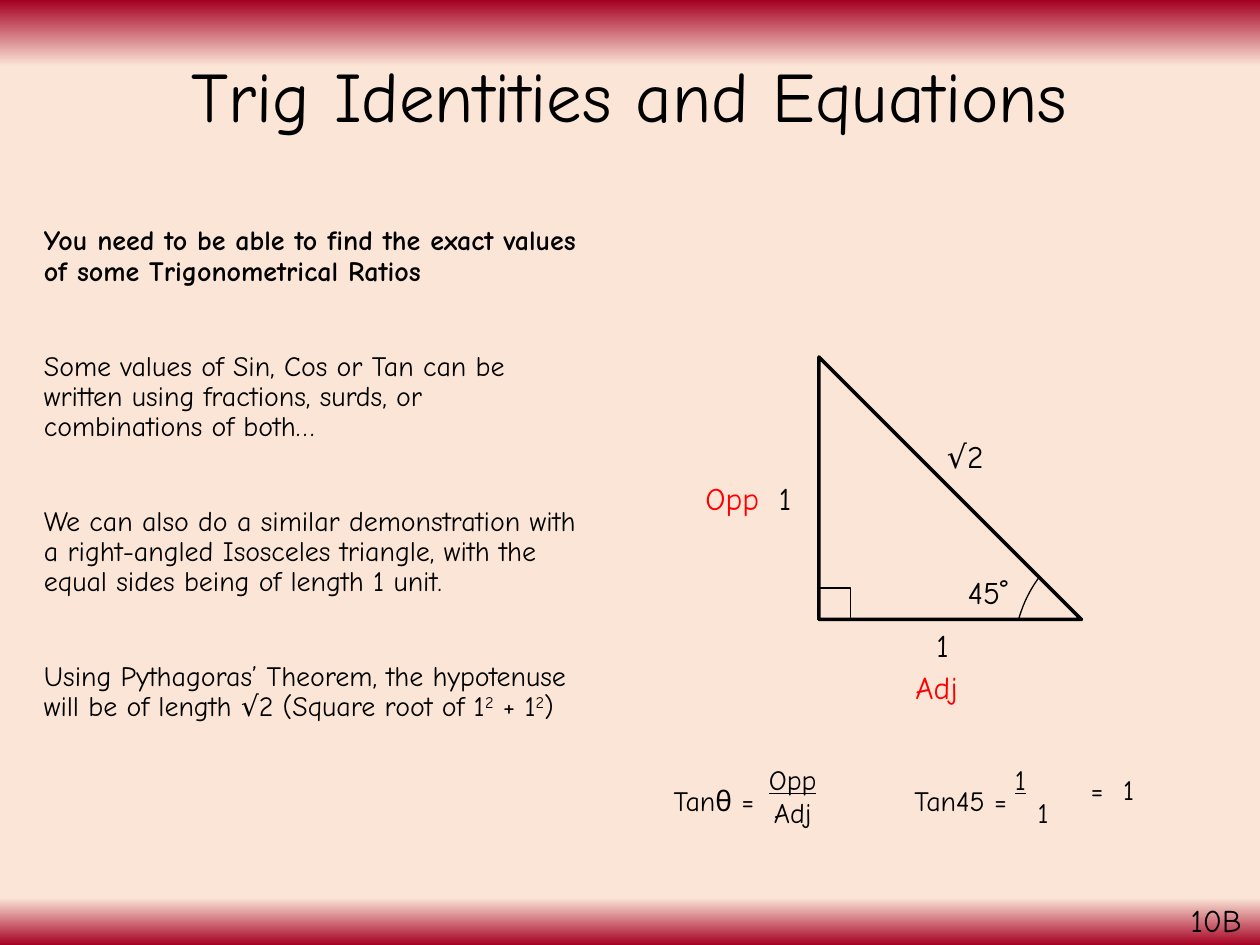
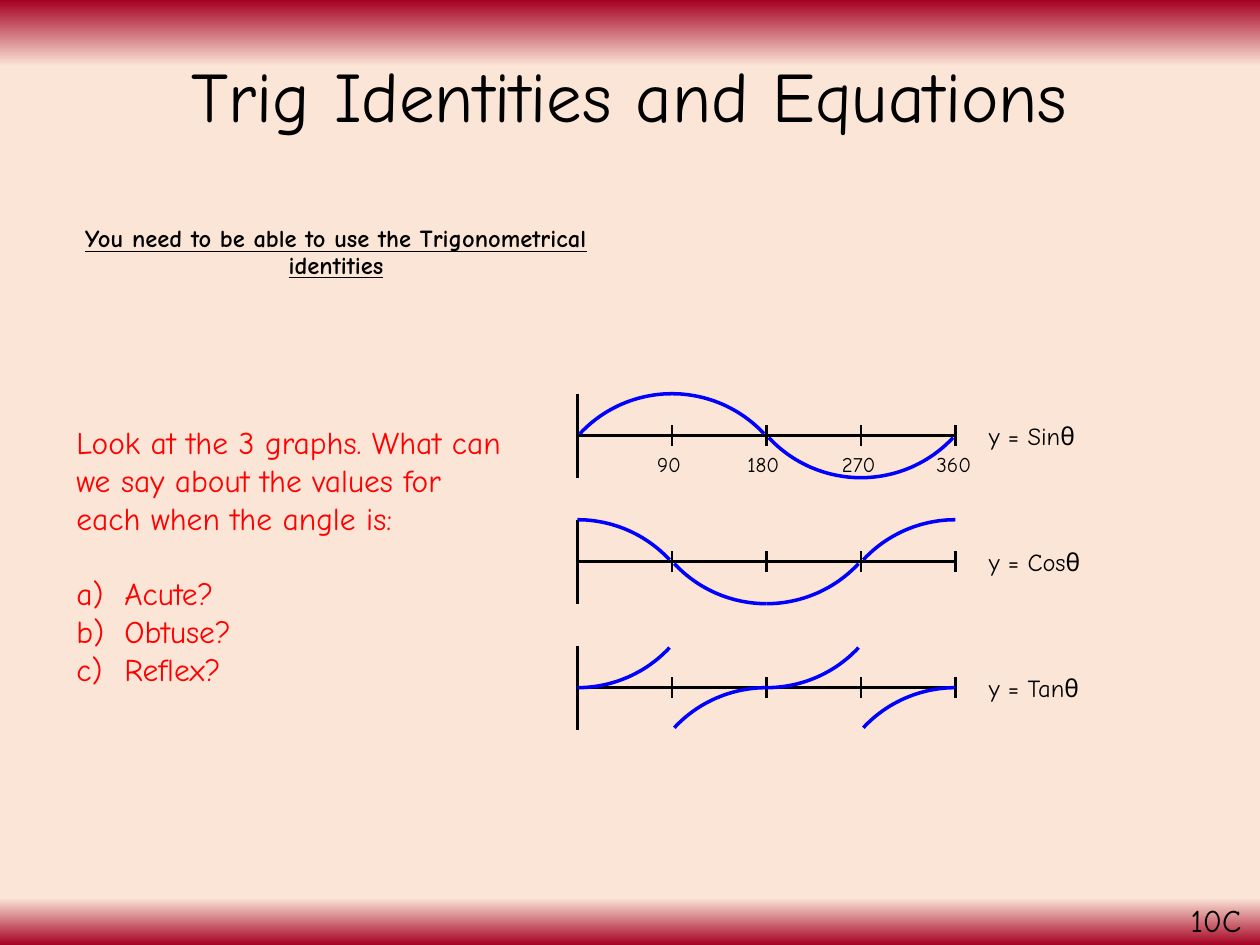
from math import cos, radians, sin

from lxml import etree
from pptx import Presentation
from pptx.dml.color import RGBColor
from pptx.enum.shapes import MSO_CONNECTOR, MSO_SHAPE
from pptx.enum.text import MSO_ANCHOR, PP_ALIGN
from pptx.oxml.ns import qn
from pptx.util import Inches, Pt

LEFT, CENTER = PP_ALIGN.LEFT, PP_ALIGN.CENTER
TOP, MIDDLE = MSO_ANCHOR.TOP, MSO_ANCHOR.MIDDLE
STRAIGHT = MSO_CONNECTOR.STRAIGHT
RECT, RIGHT_TRIANGLE = MSO_SHAPE.RECTANGLE, MSO_SHAPE.RIGHT_TRIANGLE

BLACK = RGBColor(0x00, 0x00, 0x00)
RED = RGBColor(0xFF, 0x00, 0x00)
BLUE = RGBColor(0x00, 0x00, 0xFF)
CRIMSON = RGBColor(0xA5, 0x00, 0x21)
PEACH = RGBColor(0xFB, 0xE5, 0xD6)

FONT = "Comic Neue"
TITLE = "Trig Identities and Equations"
BANDS = [(0, CRIMSON), (7, PEACH), (95, PEACH), (100, CRIMSON)]
COLS, ROWS = 120, 90


class Deck:
    def __init__(self):
        self.prs = Presentation()
        self.prs.slide_width = Inches(10)
        self.prs.slide_height = Inches(7.5)
        self.col = self.prs.slide_width / COLS
        self.row = self.prs.slide_height / ROWS
        self.s = None

    def x(self, cols):
        return round(cols * self.col)

    def y(self, rows):
        return round(rows * self.row)

    def box(self, x, y, w, h):
        return self.x(x), self.y(y), self.x(w), self.y(h)

    def slide(self, section):
        self.s = self.prs.slides.add_slide(self.prs.slide_layouts[6])
        self.background()
        self.text(8.3, 2.9, 103.4, 13.1, [TITLE], 40.5, align=CENTER,
                  anchor=MIDDLE, spacing=0.9)
        self.text(112.2, 85.2, 7.8, 4.8, [section])

    def background(self):
        fill = self.s.background.fill
        fill.gradient()
        fill.gradient_angle = 270
        stops = self.s.element.find(".//" + qn("a:gsLst"))
        for stop in list(stops):
            stops.remove(stop)
        for pos, color in BANDS:
            stop = etree.SubElement(stops, qn("a:gs"), pos=str(pos * 1000))
            etree.SubElement(stop, qn("a:srgbClr"), val=str(color))

    def text(self, x, y, w, h, paras, size=18, color=BLACK, align=LEFT,
             anchor=TOP, spacing=None):
        tf = self.s.shapes.add_textbox(*self.box(x, y, w, h)).text_frame
        tf.word_wrap = True
        tf.vertical_anchor = anchor
        for i, para in enumerate(paras):
            p = tf.paragraphs[0] if i == 0 else tf.add_paragraph()
            p.alignment = align
            p.line_spacing = spacing
            para = para if isinstance(para, dict) else {"runs": [para]}
            self.indent(p, para)
            for run in para["runs"]:
                self.run(p, run, size, color)

    def indent(self, p, para):
        if "before" in para:
            p.space_before = Pt(para["before"])
        pPr = p._p.get_or_add_pPr()
        if "margin" in para:
            pPr.set("marL", str(Inches(para["margin"])))
        if "number" in para:
            pPr.set("indent", str(-Inches(para["margin"])))
            etree.SubElement(pPr, qn("a:buFont"), typeface=FONT)
            etree.SubElement(pPr, qn("a:buAutoNum"), type=para["number"])

    def run(self, p, run, size, color):
        words, style = run if isinstance(run, tuple) else (run, "")
        r = p.add_run()
        r.text = words
        r.font.name = FONT
        r.font.size = Pt(size)
        r.font.color.rgb = color
        r.font.bold = "b" in style
        r.font.underline = "u" in style
        if "^" in style:
            r._r.get_or_add_rPr().set("baseline", "30000")

    def outline(self, sp, color, width):
        sp.shadow.inherit = False
        sp.fill.background()
        sp.line.color.rgb = color
        sp.line.width = Pt(width)

    def shape(self, kind, x, y, w, h, width):
        sp = self.s.shapes.add_shape(kind, *self.box(x, y, w, h))
        self.outline(sp, BLACK, width)

    def line(self, x1, y1, x2, y2, width=1.5):
        sp = self.s.shapes.add_connector(
            STRAIGHT, self.x(x1), self.y(y1), self.x(x2), self.y(y2))
        sp.line.color.rgb = BLACK
        sp.line.width = Pt(width)
        etree.SubElement(sp._element.spPr, qn("a:effectLst"))

    def arc(self, cx, cy, radius, start, end, color, width, steps=24):
        angles = [radians(start + (end - start) * i / steps)
                  for i in range(steps + 1)]
        points = [(self.x(cx + radius * cos(a)), self.y(cy + radius * sin(a)))
                  for a in angles]
        path = self.s.shapes.build_freeform(*points[0])
        path.add_line_segments(points[1:], close=False)
        self.outline(path.convert_to_shape(), color, width)

    def graph(self, name, axis, arcs):
        left, quarter, radius, sweep = 55, 9, 12, 47
        self.line(left, axis - 4, left, axis + 4)
        self.line(left, axis, left + 4 * quarter, axis)
        for i in range(1, 5):
            tick = left + i * quarter
            self.line(tick, axis - 1, tick, axis + 1)
        for turn, side, height, bend in arcs:
            self.arc(left + turn * quarter, axis - height - bend * radius,
                     radius, bend * 90, bend * (90 - side * sweep), BLUE, 2)
        self.text(93, axis - 2, 12, 4, [name], 14)


def exact_values(d):
    d.slide("10B")
    paras = [
        [("You need to be able to find the exact values of some "
          "Trigonometrical Ratios", "b")],
        ["Some values of Sin, Cos or Tan can be written using fractions, "
         "surds, or combinations of both…"],
        ["We can also do a similar demonstration with a right-angled "
         "Isosceles triangle, with the equal sides being of length 1 unit."],
        ["Using Pythagoras’ Theorem, the hypotenuse will be of length √2 "
         "(Square root of 1", ("2", "^"), " + 1", ("2", "^"), ")"],
    ]
    d.text(0, 21, 57.2, 59.4,
           [{"runs": runs, "margin": 0.25, "before": 37 if i else 10}
            for i, runs in enumerate(paras)], 16, spacing=0.9)

    d.shape(RIGHT_TRIANGLE, 78, 34, 25, 25, 2)
    d.shape(RECT, 78, 56, 3, 3, 0.75)
    d.arc(108.6, 62.15, 12, 195.2, 217.2, BLACK, 0.75)
    for words, x, y, w, color in [
        ("45˚", 91, 54, 8, BLACK),
        ("1", 73, 45, 4, BLACK),
        ("1", 88, 59, 4, BLACK),
        ("√2", 89, 41, 9, BLACK),
        ("Opp", 66, 45, 9, RED),
        ("Adj", 86, 63, 9, RED),
    ]:
        d.text(x, y, w, 4.8, [words], color=color)

    for words, x, y, w in [
        ("Tanθ =", 62, 74, 12),
        ("Tan45 =", 85, 74, 13),
        ("=", 102, 73, 5),
        ("1", 104, 73, 7),
    ]:
        d.text(x, y, w, 4.4, [words], 16, align=CENTER)
    d.text(71, 72, 9, 7.7, [("Opp", "u"), "Adj"], 16, align=CENTER)
    d.text(95, 72, 9, 7.7, [{"runs": [("1", "u")], "margin": 0.04},
                            {"runs": ["1"], "margin": 0.22}], 16)


def identities(d):
    d.slide("10C")
    d.text(3, 21, 58, 59.4,
           [("You need to be able to use the Trigonometrical identities",
             "bu")], 14, align=CENTER, spacing=0.9)
    answers = [{"runs": [word], "margin": 0.38, "number": "alphaLcParenR",
                "before": 0 if i else 21.6}
               for i, word in enumerate(["Acute?", "Obtuse?", "Reflex?"])]
    d.text(6.1, 39.7, 43.1, 26.6,
           ["Look at the 3 graphs. What can we say about the values for "
            "each when the angle is:"] + answers, color=RED)

    d.graph("y = Sinθ", 41.5, [(1, -1, 4, -1), (1, 1, 4, -1),
                               (3, -1, -4, 1), (3, 1, -4, 1)])
    d.graph("y = Cosθ", 53.5, [(0, 1, 4, -1), (2, -1, -4, 1),
                               (2, 1, -4, 1), (4, -1, 4, -1)])
    d.graph("y = Tanθ", 65.5, [(0, 1, 0, 1), (2, -1, 0, -1),
                               (2, 1, 0, 1), (4, -1, 0, -1)])
    for i in range(1, 5):
        x = 61.4 if i == 1 else 52 + 9 * i
        d.text(x, 42.4, 7, 3.6, [str(90 * i)], 12)


def main():
    d = Deck()
    exact_values(d)
    identities(d)
    d.prs.save("out.pptx")


if __name__ == "__main__":
    main()
